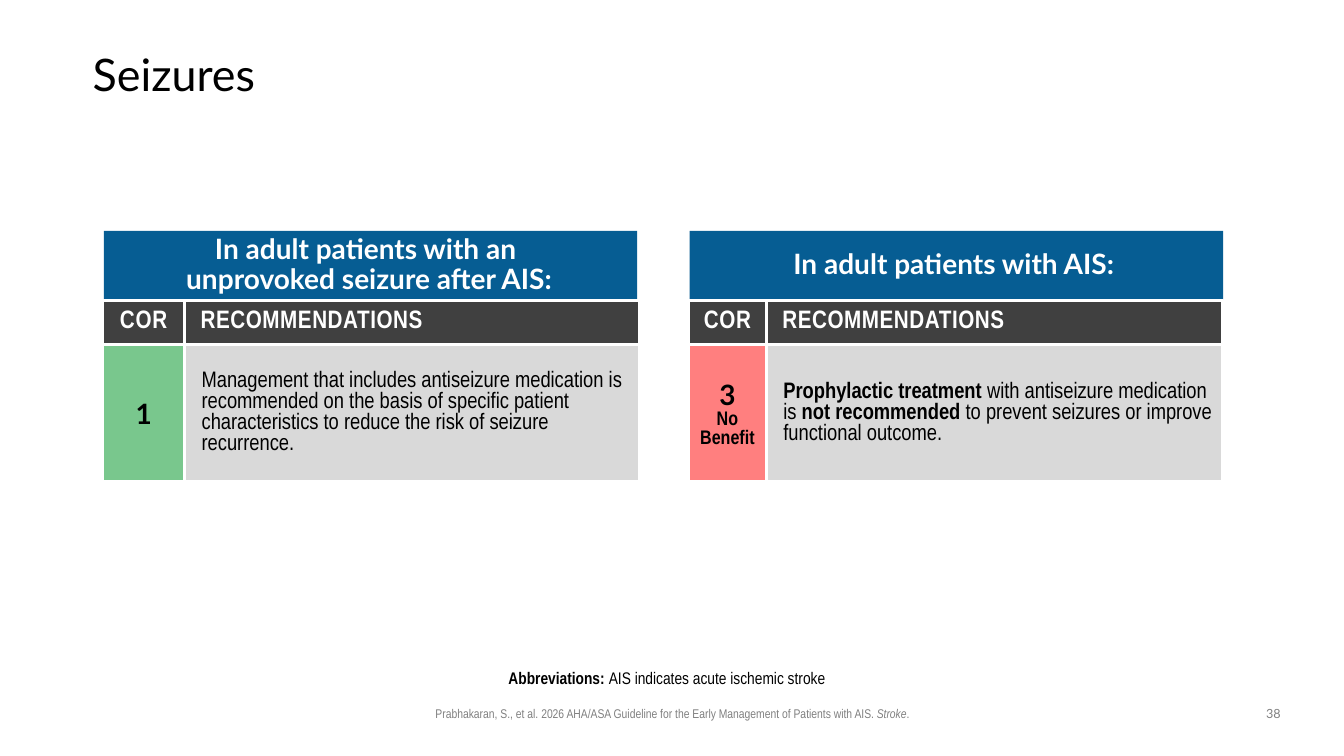
from lxml import etree
from pptx import Presentation
from pptx.dml.color import RGBColor
from pptx.enum.shapes import MSO_SHAPE
from pptx.enum.text import MSO_ANCHOR, PP_ALIGN
from pptx.oxml.ns import qn
from pptx.util import Inches, Pt

CHEVRON = MSO_SHAPE.CHEVRON
LEFT, CENTER = PP_ALIGN.LEFT, PP_ALIGN.CENTER
TOP, MIDDLE, BOTTOM = MSO_ANCHOR.TOP, MSO_ANCHOR.MIDDLE, MSO_ANCHOR.BOTTOM

THEME = {
    "heading": "Lato", "body": "Arial Narrow",
    "black": "000000", "white": "FFFFFF", "grey": "808080",
    "banner": "065D93", "header": "404040", "panel": "D9D9D9",
    "benefit": "79C78D", "no_benefit": "FF7F7F",
    "title_size": 32, "banner_size": 20, "header_size": 18,
    "text_size": 16, "label_size": 14, "note_size": 12, "footer_size": 9,
}


def style(face, size, color, bold=False, italic=False, spacing=0):
    return {"name": THEME[face], "size": Pt(THEME[size]), "color": THEME[color],
            "bold": bold, "italic": italic, "spacing": spacing}


def write(frame, spans, anchor, layout, indent=0):
    frame.word_wrap = True
    frame.vertical_anchor = anchor
    para = frame.paragraphs[0]
    if indent:
        para._p.get_or_add_pPr().set("marL", str(Inches(indent)))
        para._p.get_or_add_pPr().set("indent", "0")
    for name, value in layout.items():
        setattr(para, name, value)
    for text, look in spans:
        for number, line in enumerate(text.split("\n")):
            if number:
                para.add_line_break()
            if not line:
                continue
            span = para.add_run()
            span.text = line
            for name in ("name", "size", "bold", "italic"):
                setattr(span.font, name, look[name])
            span.font.color.rgb = RGBColor.from_string(look["color"])
            if look["spacing"]:
                span._r.get_or_add_rPr().set("spc", str(look["spacing"]))


title = style("heading", "title_size", "black")
banner_text = style("heading", "banner_size", "white", bold=True)
cor_header = style("body", "header_size", "white", bold=True, spacing=50)
advice_header = style("body", "header_size", "white", bold=True, spacing=40)
grade = style("heading", "banner_size", "black", bold=True)
grade_label = style("body", "label_size", "black", bold=True)
plain = style("body", "text_size", "black")
strong = style("body", "text_size", "black", bold=True)
note = style("body", "note_size", "black")
note_strong = style("body", "note_size", "black", bold=True)
citation = style("body", "footer_size", "grey")
journal = style("body", "footer_size", "grey", italic=True)
page_number = style("heading", "footer_size", "grey")

flush = (0, 0, 0, 0)
roomy = (0.1, 0.05, 0.1, 0.05)
snug = (0.05, 0.05, 0.05, 0.05)
sides = ("margin_left", "margin_top", "margin_right", "margin_bottom")
banner_layout = {"alignment": CENTER, "line_spacing": 0.9}

panels = [
    {"left": 1.03, "text_left": 1.02, "table_left": 1.02, "columns": (0.81, 4.51),
     "heading": "In adult patients with an \nunprovoked seizure after AIS:",
     "color": "benefit", "grade": [("1", grade)],
     "advice": [("Management that includes antiseizure medication is recommended on the "
                 "basis of specific patient characteristics to reduce the risk of "
                 "seizure recurrence.", plain)]},
    {"left": 6.84, "text_left": 6.82, "table_left": 6.83, "columns": (0.77, 4.52),
     "heading": "In adult patients with AIS:",
     "color": "no_benefit", "grade": [("3\n", grade), ("No Benefit", grade_label)],
     "advice": [("Prophylactic treatment ", strong),
                ("with antiseizure medication is ", plain),
                ("not recommended ", strong),
                ("to prevent seizures or improve functional outcome.", plain)]},
]

deck = Presentation()
deck.slide_width, deck.slide_height = Inches(13.33), Inches(7.5)
page = deck.slides.add_slide(deck.slide_layouts[6])

texts = [
    ((2.36, 6.95, 8.62, 0.25), roomy, TOP, {"alignment": CENTER},
     [("Prabhakaran, S., et al. 2026 AHA/ASA Guideline for the Early Management "
       "of Patients with AIS. ", citation), ("Stroke", journal), (".", citation)]),
    ((0.92, 0.4, 11.5, 0.72), flush, MIDDLE, {"alignment": LEFT, "line_spacing": 0.9},
     [("Seizures", title)]),
    ((1.88, 6.42, 9.57, 0.46), (0, 0.05, 0.1, 0.05), BOTTOM, banner_layout,
     [("Abbreviations: ", note_strong), ("AIS indicates acute ischemic stroke", note)]),
    ((12.42, 6.95, 0.42, 0.26), roomy, TOP, {"alignment": CENTER}, [("38", page_number)]),
]

for panel in panels:
    banner = page.shapes.add_shape(
        CHEVRON, Inches(panel["left"]), Inches(2.29), Inches(5.29), Inches(0.68))
    banner.adjustments[0] = 0
    banner.shadow.inherit = False
    banner.fill.solid()
    banner.fill.fore_color.rgb = RGBColor.from_string(THEME["banner"])
    banner.line.fill.background()
    texts.append(((panel["text_left"], 2.37, 5.28, 0.53), flush, MIDDLE, banner_layout,
                  [(panel["heading"], banner_text)]))

    table = page.shapes.add_table(
        2, 2, Inches(panel["table_left"]), Inches(2.98),
        Inches(sum(panel["columns"])), Inches(1.8)).table
    for column, width in zip(table.columns, panel["columns"]):
        column.width = Inches(width)
    for row, height in zip(table.rows, (0.44, 1.36)):
        row.height = Inches(height)

    header_layout = {"space_before": Pt(2.8)}
    cells = [
        ("header", roomy, 0, {"alignment": CENTER, **header_layout}, [("COR", cor_header)]),
        ("header", roomy, 0.06, header_layout, [("RECOMMENDATIONS", advice_header)]),
        (panel["color"], snug, 0, {"alignment": CENTER, "space_before": Pt(3)},
         panel["grade"]),
        ("panel", snug, 0.12, {"space_before": Pt(6), "space_after": Pt(6)},
         panel["advice"]),
    ]
    for cell, (color, margins, indent, layout, spans) in zip(table.iter_cells(), cells):
        for side, margin in zip(sides, margins):
            setattr(cell, side, Inches(margin))
        cell.vertical_anchor = MIDDLE
        properties = cell._tc.get_or_add_tcPr()
        for edge in ("a:lnL", "a:lnR", "a:lnT", "a:lnB"):
            border = etree.SubElement(properties, qn(edge), w=str(Pt(2.25)))
            fill = etree.SubElement(border, qn("a:solidFill"))
            etree.SubElement(fill, qn("a:srgbClr"), val=THEME["white"])
        cell.fill.solid()
        cell.fill.fore_color.rgb = RGBColor.from_string(THEME[color])
        write(cell.text_frame, spans, MIDDLE, layout, indent)

for place, margins, anchor, layout, spans in texts:
    box = page.shapes.add_textbox(*map(Inches, place))
    for side, margin in zip(sides, margins):
        setattr(box.text_frame, side, Inches(margin))
    write(box.text_frame, spans, anchor, layout)

deck.save("out.pptx")
